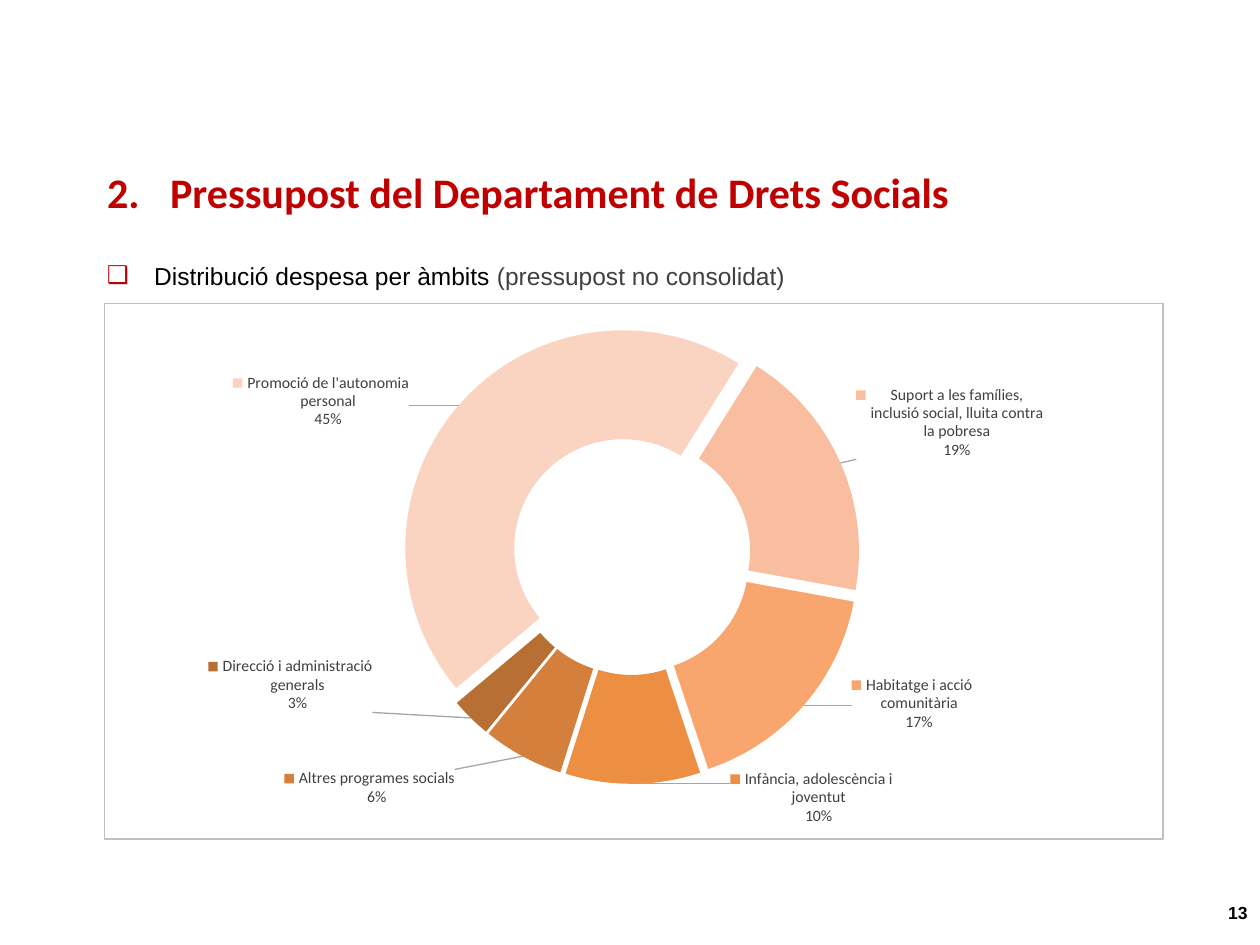
from lxml import etree
from pptx import Presentation
from pptx.chart.data import CategoryChartData
from pptx.dml.color import RGBColor
from pptx.enum.chart import XL_CHART_TYPE
from pptx.enum.shapes import MSO_SHAPE
from pptx.enum.text import MSO_ANCHOR, PP_ALIGN
from pptx.oxml import parse_xml
from pptx.oxml.ns import qn
from pptx.util import Pt

DOUGHNUT = XL_CHART_TYPE.DOUGHNUT
RECTANGLE = MSO_SHAPE.RECTANGLE
TOP, MIDDLE, BOTTOM = MSO_ANCHOR.TOP, MSO_ANCHOR.MIDDLE, MSO_ANCHOR.BOTTOM
LEFT, RIGHT = PP_ALIGN.LEFT, PP_ALIGN.RIGHT

# Content
TITLE = "Pressupost del Departament de Drets Socials"
SUBTITLE = ("Distribució despesa per àmbits ", "(pressupost no consolidat)")
PAGE_NUMBER = "13"
# Area, share, colour, label offset (x, y) and label size (w, h) as chart fractions
AREAS = [
    ("Promoció de l'autonomia personal", 45, "FBD3C1", (-0.18, -0.07), (0.19, 0.1)),
    ("Suport a les famílies, inclusió social, lluita contra la pobresa", 19, "F9BE9F",
     (0.16, -0.11), (0.18, 0.13)),
    ("Habitatge i acció comunitària", 17, "F8A56E", (0.15, 0.06), (0.14, 0.1)),
    ("Infància, adolescència i joventut", 10, "EC8F43", (0.18, 0.12), (0.17, 0.1)),
    ("Altres programes socials", 6, "D4803C", (-0.18, 0.14), (0.18, 0.07)),
    ("Direcció i administració generals", 3, "B76F34", (-0.22, 0.01), (0.17, 0.1)),
]

THEME = {
    "red": "C00000", "black": "000000", "grey": "404040", "white": "FFFFFF",
    "frame": "C0C0C0", "leader": "A6A6A6",
    "heading_font": "Calibri", "body_font": "Arial",
    "title": 24, "subtitle": 14, "chart": 10, "label": 9, "page": 10,
}

# Places in points: left, top, width, height
PLACES = {
    "title": (54, 48.24, 635.04, 79.2),
    "subtitle": (54, 145.44, 612, 24.48),
    "frame": (59.76, 173.52, 604.8, 306),
    "chart": (75.6, 155.52, 568.08, 324),
    "page": (552.24, 502.56, 167.76, 37.44),
}
PLOT = {"x": 0.272, "y": 0.096, "w": 0.46, "h": 0.807}
START_ANGLE, HOLE_SIZE, EXPLOSION = 230, 60, 10

C_NS = 'xmlns:c="http://schemas.openxmlformats.org/drawingml/2006/chart"'
A_NS = 'xmlns:a="http://schemas.openxmlformats.org/drawingml/2006/main"'
C15_NS = 'xmlns:c15="http://schemas.microsoft.com/office/drawing/2012/chart"'


def place(name):
    return [Pt(length) for length in PLACES[name]]


def color(name):
    return RGBColor.from_string(THEME.get(name, name))


def write(shape, spans, *, size, font, bold=False, align=LEFT, anchor=TOP, bullet=None, indent=0):
    """Write one paragraph of (text, colour) spans, with an optional bullet."""
    frame = shape.text_frame
    frame.word_wrap = True
    frame.vertical_anchor = anchor
    para = frame.paragraphs[0]
    para.alignment = align
    if bullet:
        properties = para._p.get_or_add_pPr()
        properties.set("marL", str(Pt(indent)))
        properties.set("indent", str(-Pt(indent)))
        for element in bullet:
            properties.append(parse_xml(element))
    for text, shade in spans:
        span = para.add_run()
        span.text = text
        span.font.size = Pt(THEME[size])
        span.font.name = THEME[font]
        span.font.bold = bold
        span.font.color.rgb = color(shade)


def manual_layout(values, inner=False):
    target = '<c:layoutTarget val="inner"/>' if inner else ""
    modes = '<c:xMode val="edge"/><c:yMode val="edge"/>' if inner else ""
    numbers = "".join(f'<c:{key} val="{value}"/>' for key, value in values.items())
    return f"<c:layout><c:manualLayout>{target}{modes}{numbers}</c:manualLayout></c:layout>"


def labels_xml():
    """Category and percentage labels, each moved away from its slice."""
    text = (f'<c:numFmt formatCode="0%" sourceLinked="0"/>'
            f'<c:spPr><a:noFill/><a:ln><a:noFill/></a:ln></c:spPr>'
            f'<c:txPr><a:bodyPr wrap="square"/><a:p><a:pPr><a:defRPr sz="{THEME["label"] * 100}" b="0">'
            f'<a:solidFill><a:srgbClr val="{THEME["grey"]}"/></a:solidFill>'
            f'<a:latin typeface="{THEME["heading_font"]}"/></a:defRPr></a:pPr>'
            f'<a:endParaRPr lang="ca-ES"/></a:p></c:txPr>')
    shown = {"LegendKey": 1, "Val": 0, "CatName": 1, "SerName": 0, "Percent": 1, "BubbleSize": 0}
    flags = "".join(f'<c:show{key} val="{value}"/>' for key, value in shown.items())
    flags += "<c:separator>\n</c:separator>"
    items = ""
    for index, (_, _, _, (x, y), (width, height)) in enumerate(AREAS):
        items += (f'<c:dLbl><c:idx val="{index}"/>{manual_layout({"x": x, "y": y})}{text}{flags}'
                  f'<c:extLst><c:ext uri="{{CE6537A1-D6FC-4f65-9D91-7224C49458BB}}" {C15_NS}>'
                  f'<c15:layout><c:manualLayout><c:w val="{width}"/><c:h val="{height}"/>'
                  f'</c:manualLayout></c15:layout></c:ext></c:extLst></c:dLbl>')
    return (f'<c:dLbls {C_NS} {A_NS}>{items}{text}{flags}<c:showLeaderLines val="1"/>'
            f'<c:leaderLines><c:spPr><a:ln w="{Pt(0.75)}"><a:solidFill>'
            f'<a:srgbClr val="{THEME["leader"]}"/></a:solidFill></a:ln></c:spPr></c:leaderLines></c:dLbls>')


def add_doughnut(page):
    data = CategoryChartData()
    data.categories = [area[0] for area in AREAS]
    data.add_series("Series 1", [area[1] for area in AREAS])
    chart = page.shapes.add_chart(DOUGHNUT, *place("chart"), data).chart
    chart.has_title = False
    chart.has_legend = False
    chart.font.size = Pt(THEME["chart"])
    chart.font.name = THEME["heading_font"]
    chart.font.color.rgb = color("black")
    plot = chart.plots[0]
    plot.vary_by_categories = True
    series = plot.series[0]
    for index, area in enumerate(AREAS):
        slice_format = series.points[index].format
        slice_format.fill.solid()
        slice_format.fill.fore_color.rgb = color(area[2])
        slice_format.line.fill.background()

    # Exploded slices and labels
    node = series._element
    explosion = parse_xml(f'<c:explosion {C_NS} val="{EXPLOSION}"/>')
    node.find(qn("c:dPt")).addprevious(explosion)
    node.find(qn("c:cat")).addprevious(parse_xml(labels_xml()))

    # Ring geometry
    ring = node.getparent()
    for tag, value in (("c:firstSliceAng", START_ANGLE), ("c:holeSize", HOLE_SIZE)):
        setting = ring.find(qn(tag))
        if setting is None:
            setting = etree.SubElement(ring, qn(tag))
        setting.set("val", str(value))
    area_node = ring.getparent()
    for old in area_node.findall(qn("c:layout")):
        area_node.remove(old)
    layout = manual_layout(PLOT, inner=True).replace("<c:layout>", f"<c:layout {C_NS}>", 1)
    area_node.insert(0, parse_xml(layout))


def main():
    deck = Presentation()
    deck.slide_width, deck.slide_height = Pt(720), Pt(540)
    page = deck.slides.add_slide(deck.slide_layouts[5])

    # Numbered title
    title = page.shapes.title
    title.left, title.top, title.width, title.height = place("title")
    write(title, [(TITLE, "red")], size="title", font="heading_font", bold=True, anchor=BOTTOM,
          bullet=[f'<a:buFont {A_NS} typeface="+mj-lt"/>',
                  f'<a:buAutoNum {A_NS} type="arabicPeriod" startAt="2"/>'], indent=36)

    # Chart frame
    frame = page.shapes.add_shape(RECTANGLE, *place("frame"))
    frame.shadow.inherit = False
    frame.fill.solid()
    frame.fill.fore_color.rgb = color("white")
    frame.line.color.rgb = color("frame")
    frame.line.width = Pt(0.75)

    # Page number and subtitle
    number = page.shapes.add_textbox(*place("page"))
    write(number, [(PAGE_NUMBER, "black")], size="page", font="body_font", bold=True,
          align=RIGHT, anchor=MIDDLE)
    subtitle = page.shapes.add_textbox(*place("subtitle"))
    write(subtitle, list(zip(SUBTITLE, ("black", "grey"))), size="subtitle", font="body_font",
          bullet=[f'<a:buClr {A_NS}><a:srgbClr val="{THEME["red"]}"/></a:buClr>',
                  f'<a:buFont {A_NS} typeface="Arial"/>',
                  f'<a:buChar {A_NS} char="❑"/>'], indent=27)

    add_doughnut(page)
    deck.save("out.pptx")


if __name__ == "__main__":
    main()
